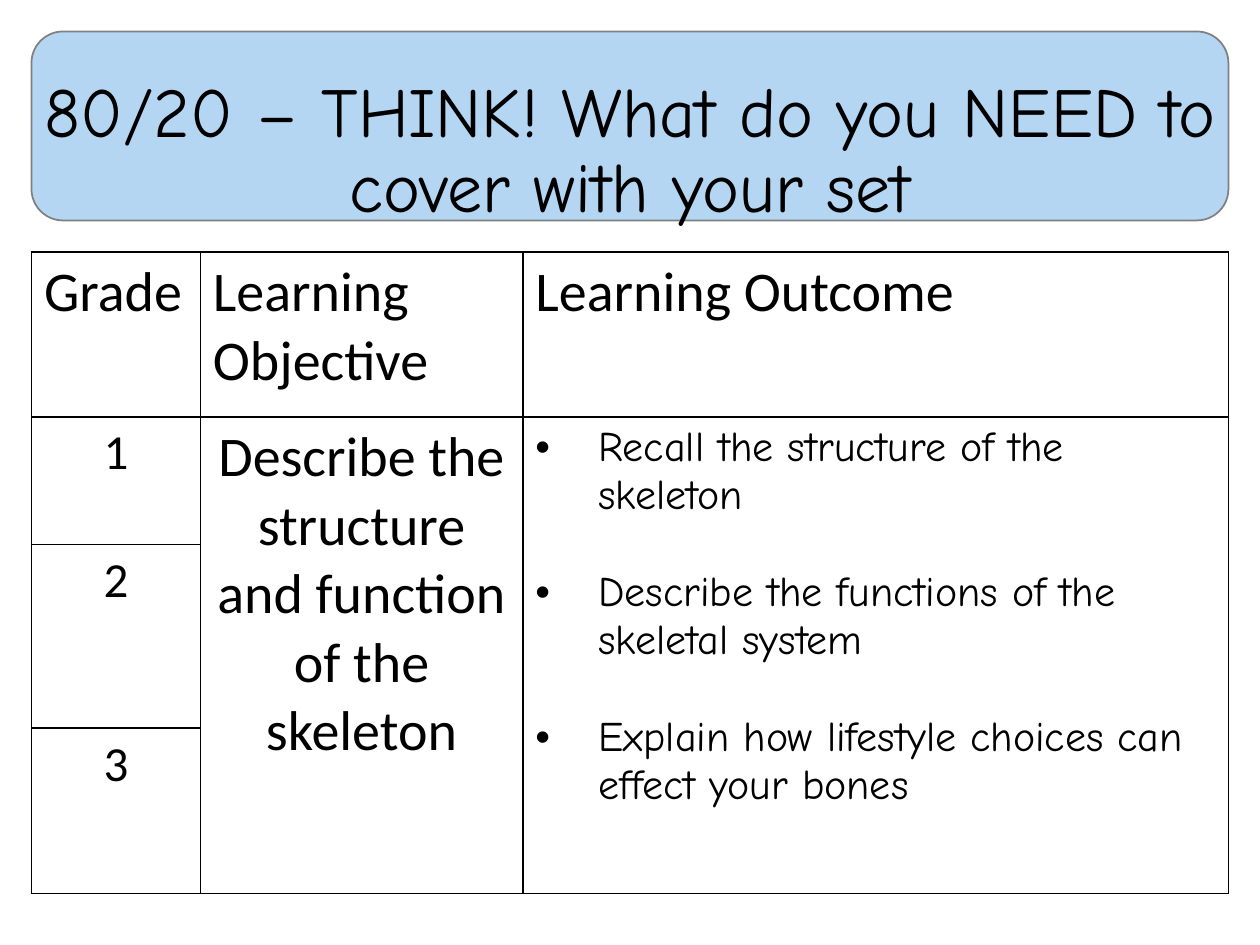
from lxml import etree
from pptx import Presentation
from pptx.dml.color import RGBColor
from pptx.enum.shapes import MSO_SHAPE
from pptx.enum.text import MSO_ANCHOR, PP_ALIGN
from pptx.oxml.ns import qn
from pptx.util import Inches, Pt

BLACK = RGBColor(0, 0, 0)
WHITE = RGBColor(255, 255, 255)
GREY = RGBColor(0x80, 0x80, 0x80)
PALE_BLUE = RGBColor(0xB4, 0xD6, 0xF2)
ROUNDED = MSO_SHAPE.ROUNDED_RECTANGLE
LEFT, CENTER = PP_ALIGN.LEFT, PP_ALIGN.CENTER
BOTTOM = MSO_ANCHOR.BOTTOM
BODY_FONT, HAND_FONT = "Calibri", "Comic Neue"
TITLE_ONLY = 5

MARGIN = 0.25
CONTENT_WIDTH = 9.5
COLUMNS = [1.34, 2.56, 5.6]
ROWS = [1.31, 1.01, 1.46, 1.31]
HEADINGS = ["Grade", "Learning Objective", "Learning Outcome"]
GRADES = ["1", "2", "3"]
OBJECTIVE = "Describe the structure and function of the skeleton"
OUTCOMES = [
    "Recall the structure of the skeleton",
    "Describe the functions of the skeletal system",
    "Explain how lifestyle choices can effect your bones",
]


def write(para, text, size, font=BODY_FONT, align=LEFT):
    para.alignment = align
    span = para.add_run()
    span.text = text
    span.font.size = Pt(size)
    span.font.name = font
    span.font.color.rgb = BLACK


def add_bullet(para, indent):
    properties = para._p.get_or_add_pPr()
    properties.set("marL", str(Inches(indent)))
    properties.set("indent", str(-Inches(indent)))
    etree.SubElement(properties, qn("a:buFont"), typeface="Arial")
    etree.SubElement(properties, qn("a:buChar"), char="•")


def style_cell(cell):
    """Give a cell a thin black border and a white fill."""
    properties = cell._tc.get_or_add_tcPr()
    for side in ("a:lnL", "a:lnR", "a:lnT", "a:lnB"):
        line = etree.SubElement(properties, qn(side), w=str(Pt(1)))
        fill = etree.SubElement(line, qn("a:solidFill"))
        etree.SubElement(fill, qn("a:srgbClr"), val=str(BLACK))
    cell.fill.solid()
    cell.fill.fore_color.rgb = WHITE


def add_banner(page, left, top, width, height):
    panel = page.shapes.add_shape(
        ROUNDED, Inches(left), Inches(top), Inches(width), Inches(height))
    panel.shadow.inherit = False
    panel.fill.solid()
    panel.fill.fore_color.rgb = PALE_BLUE
    panel.line.color.rgb = GREY
    panel.line.width = Pt(1)

    title = page.shapes.title
    panel._element.addnext(title._element)
    title.left, title.top = Inches(left), Inches(top)
    title.width, title.height = Inches(width), Inches(height + 0.11)
    frame = title.text_frame
    frame.word_wrap = True
    frame.vertical_anchor = BOTTOM
    para = frame.paragraphs[0]
    para.line_spacing = 0.9
    write(para, "80/20 – THINK! What do you NEED to cover with your set",
          40, font=HAND_FONT, align=CENTER)


def add_outcomes(frame):
    for index, outcome in enumerate(OUTCOMES):
        para = frame.add_paragraph() if index else frame.paragraphs[0]
        if index:
            para.space_before = Pt(27.6)
        add_bullet(para, 0.5)
        write(para, outcome, 24, font=HAND_FONT)


def add_grade_table(page, left, top):
    table = page.shapes.add_table(
        len(ROWS), len(COLUMNS), Inches(left), Inches(top),
        Inches(sum(COLUMNS)), Inches(sum(ROWS))).table
    table.first_row = table.horz_banding = False
    for column, width in zip(table.columns, COLUMNS):
        column.width = Inches(width)
    for row, height in zip(table.rows, ROWS):
        row.height = Inches(height)
    for cell in table.iter_cells():
        style_cell(cell)
    for column in (1, 2):
        table.cell(1, column).merge(table.cell(len(ROWS) - 1, column))

    for column, heading in enumerate(HEADINGS):
        write(table.cell(0, column).text_frame.paragraphs[0], heading, 32)
    for row, grade in enumerate(GRADES, start=1):
        write(table.cell(row, 0).text_frame.paragraphs[0], grade, 28, align=CENTER)
    write(table.cell(1, 1).text_frame.paragraphs[0], OBJECTIVE, 32, align=CENTER)
    add_outcomes(table.cell(1, 2).text_frame)


def main():
    deck = Presentation()
    deck.slide_width, deck.slide_height = Inches(10), Inches(7.5)
    page = deck.slides.add_slide(deck.slide_layouts[TITLE_ONLY])
    add_banner(page, MARGIN, MARGIN, CONTENT_WIDTH, 1.5)
    add_grade_table(page, MARGIN, 2)
    deck.save("out.pptx")


if __name__ == "__main__":
    main()
